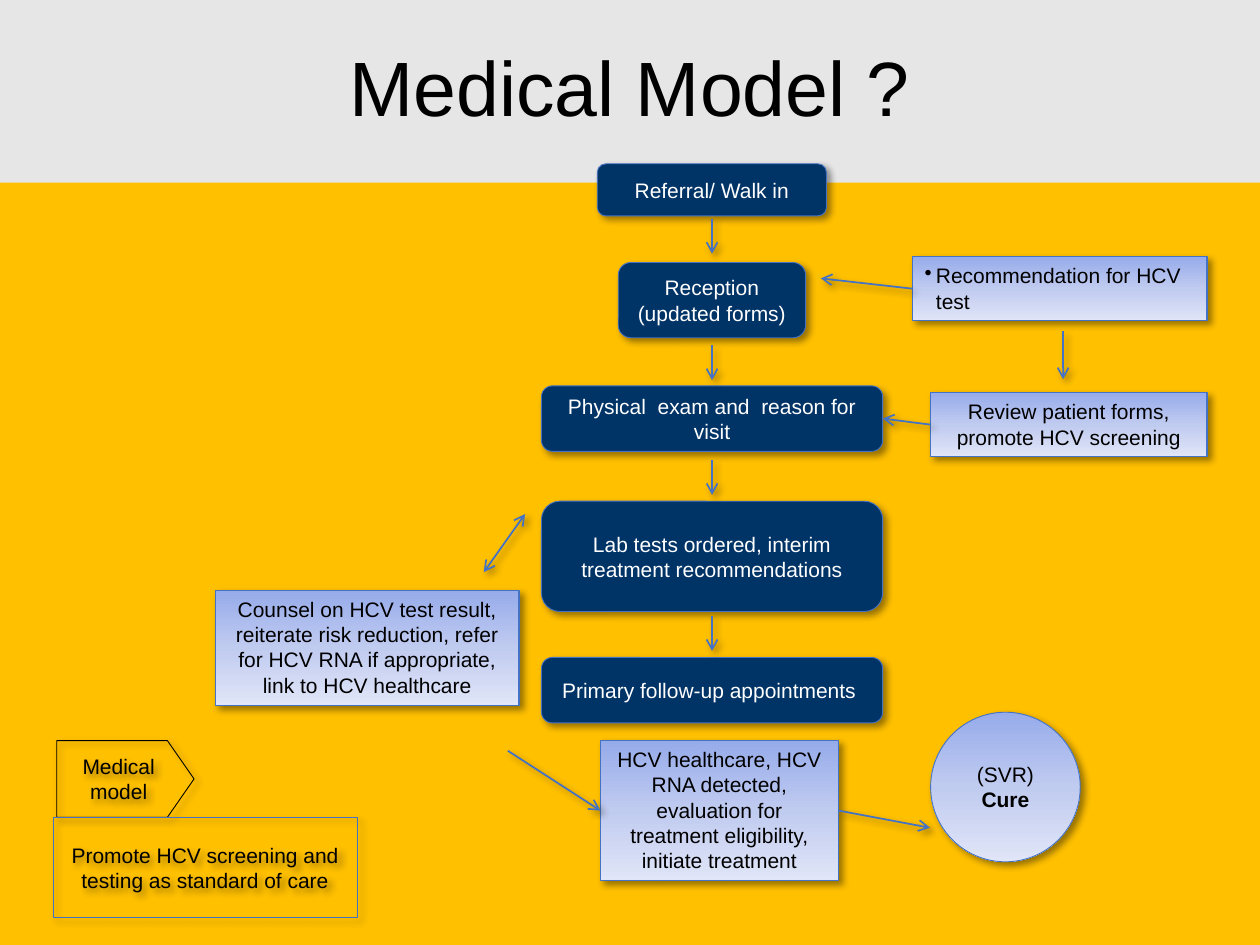
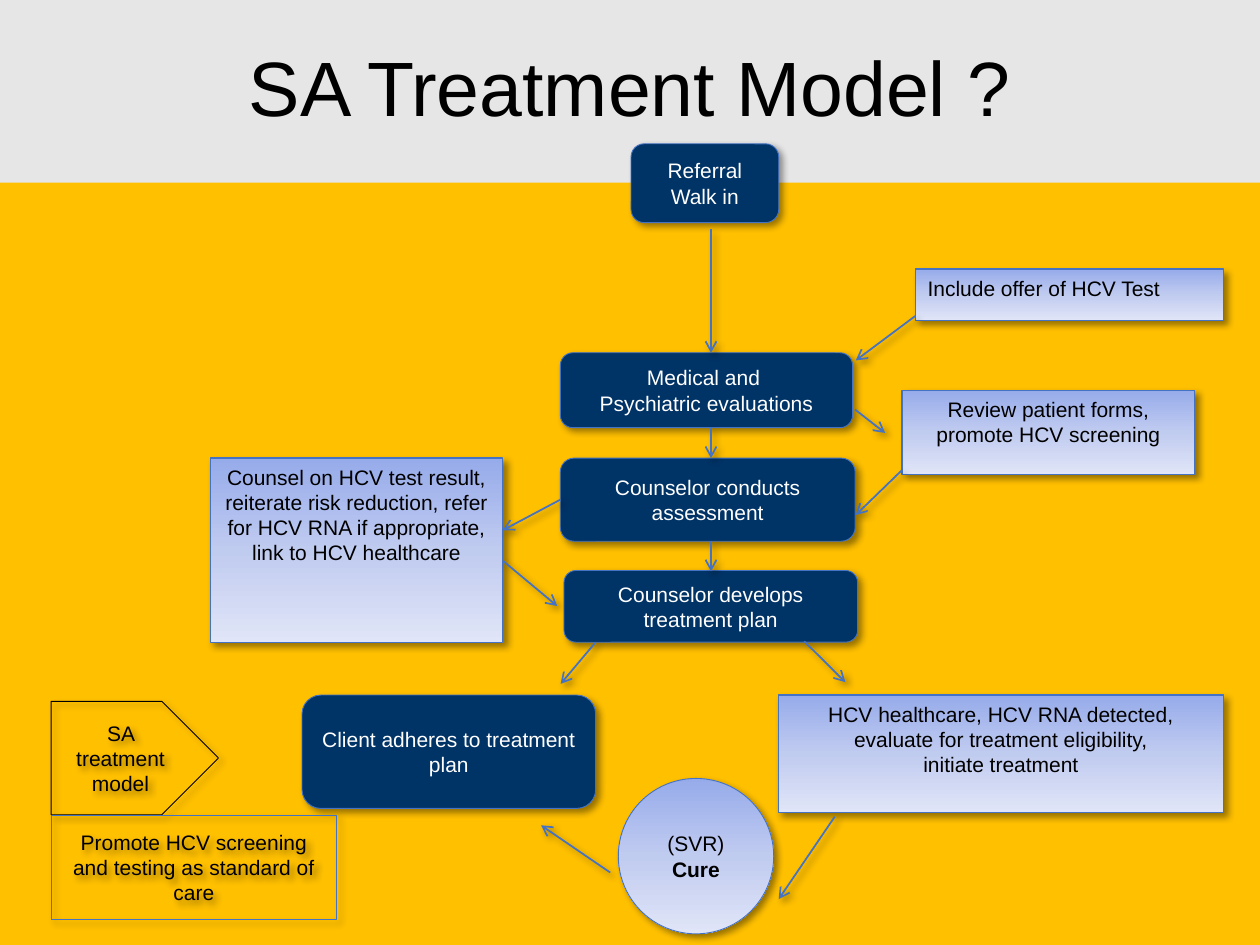
"""Builds two flow charts of hepatitis C care: a medical and a treatment model."""
from copy import deepcopy

from lxml.etree import SubElement
from pptx import Presentation
from pptx.dml.color import RGBColor
from pptx.enum.shapes import MSO_CONNECTOR, MSO_SHAPE
from pptx.enum.text import MSO_ANCHOR, PP_ALIGN
from pptx.oxml.ns import qn
from pptx.util import Pt

COLORS = {
    "background": "FFC000",
    "band": "E7E6E6",
    "step": "003366",
    "line": "4472C4",
    "dark": "000000",
    "light": "FFFFFF",
}
GRADIENT = ((0, "96ABEA"), (0.5, "C0CBF0"), (1, "E0E5F7"))
FONT = "Arial"
TEXT_SIZE = 12
TITLE_SIZE = 44
LEFT, RIGHT = 1, 3
COUNSEL = ("Counsel on HCV test result, reiterate risk reduction, refer "
           "for HCV RNA if appropriate, link to HCV healthcare")
REVIEW = "Review patient forms, promote HCV screening"
PROMOTE = "Promote HCV screening and testing as standard of care"


def rgb(name):
    """Return the named colour."""
    return RGBColor.from_string(COLORS[name])


def format_text(text_frame, size, color, align):
    """Set font, size, colour and alignment of every paragraph."""
    for paragraph in text_frame.paragraphs:
        paragraph.alignment = align
        for run in paragraph.runs:
            run.font.name = FONT
            run.font.size = Pt(size)
            run.font.color.rgb = rgb(color)


def add_shadow(effects):
    """Fill an effect list with the soft shadow all elements share."""
    shadow = SubElement(effects, qn("a:outerShdw"), blurRad=str(Pt(4)),
                        dist=str(Pt(3)), dir="2700000", algn="tl", rotWithShape="0")
    color = SubElement(shadow, qn("a:srgbClr"), val=COLORS["dark"])
    SubElement(color, qn("a:alpha"), val="40000")


def fill_gradient(shape):
    """Fill a shape with the pale blue gradient, top to bottom."""
    shape.fill.gradient()
    shape.fill.gradient_angle = 270
    stop_list = shape.element.spPr.find(".//" + qn("a:gsLst"))
    stop_list.insert(1, deepcopy(stop_list[0]))
    for stop, (position, color) in zip(shape.fill.gradient_stops, GRADIENT):
        stop.position = position
        stop.color.rgb = RGBColor.from_string(color)


def add_box(slide, kind, text, box, line="line", width=0.5,
            color="dark", anchor=MSO_ANCHOR.MIDDLE, align=PP_ALIGN.CENTER):
    """Add an unfilled, shadowed shape with text; box is left, top, width, height."""
    shape = slide.shapes.add_shape(kind, *map(Pt, box))
    shape.fill.background()
    shape.line.color.rgb = rgb(line)
    shape.line.width = Pt(width)
    shape.shadow.inherit = False
    add_shadow(shape.element.spPr.find(qn("a:effectLst")))
    text_frame = shape.text_frame
    text_frame.text = text
    text_frame.word_wrap = True
    text_frame.vertical_anchor = anchor
    format_text(text_frame, TEXT_SIZE, color, align)
    return shape


def add_step(slide, text, *box):
    """Add a dark blue rounded step of the main path."""
    shape = add_box(slide, MSO_SHAPE.ROUNDED_RECTANGLE, text, box, color="light")
    shape.fill.solid()
    shape.fill.fore_color.rgb = rgb("step")
    return shape


def add_note(slide, text, *box, align=PP_ALIGN.CENTER):
    """Add a pale blue box with an HCV action."""
    shape = add_box(slide, MSO_SHAPE.RECTANGLE, text, box, width=0.75,
                    anchor=MSO_ANCHOR.TOP, align=align)
    fill_gradient(shape)
    return shape


def add_bullet(paragraph):
    """Give a paragraph a hanging bullet."""
    properties = paragraph._p.get_or_add_pPr()
    properties.set("marL", str(Pt(6.5)))
    properties.set("indent", str(Pt(-6.5)))
    SubElement(properties, qn("a:buChar"), char="•")


def add_cure(slide, left, top, diameter):
    """Add the circle that marks the cure."""
    circle = add_box(slide, MSO_SHAPE.OVAL, "(SVR)\nCure", (left, top, diameter, diameter))
    fill_gradient(circle)
    circle.text_frame.paragraphs[1].runs[0].font.bold = True


def add_label(slide, name, tag_box, promote_box, point=0.5):
    """Add the pentagon naming the model and the box with its aim."""
    tag = add_box(slide, MSO_SHAPE.PENTAGON, name, tag_box, line="dark")
    tag.adjustments[0] = point
    add_box(slide, MSO_SHAPE.RECTANGLE, PROMOTE, promote_box)


def add_arrow(slide, start, end, begin_at=None, end_at=None, both_ways=False):
    """Add an arrow, joined to a (shape, side) where one is given."""
    arrow = slide.shapes.add_connector(MSO_CONNECTOR.STRAIGHT, *map(Pt, start + end))
    if begin_at:
        arrow.begin_connect(*begin_at)
    if end_at:
        arrow.end_connect(*end_at)
    arrow.line.color.rgb = rgb("line")
    arrow.line.width = Pt(1)
    line = arrow.line._get_or_add_ln()
    if both_ways:
        SubElement(line, qn("a:headEnd"), type="arrow")
    SubElement(line, qn("a:tailEnd"), type="arrow")
    add_shadow(SubElement(arrow.element.spPr, qn("a:effectLst")))


def add_titled_slide(presentation, title_text):
    """Add a title-only slide with the grey title band."""
    slide = presentation.slides.add_slide(presentation.slide_layouts[5])
    title = slide.shapes.title
    title.left, title.top = Pt(0), Pt(0)
    title.width, title.height = presentation.slide_width, Pt(104.4)
    title.fill.solid()
    title.fill.fore_color.rgb = rgb("band")
    text_frame = title.text_frame
    text_frame.text = title_text
    text_frame.vertical_anchor = MSO_ANCHOR.MIDDLE
    text_frame.paragraphs[0].line_spacing = 0.9
    format_text(text_frame, TITLE_SIZE, "dark", PP_ALIGN.CENTER)
    return slide


def build_medical_model(presentation):
    """Build the flow chart of the medical model."""
    slide = add_titled_slide(presentation, "Medical Model ?")
    add_step(slide, "Referral/ Walk in", 341.3, 93.6, 131, 29.8)
    add_step(slide, "Reception\n(updated forms)", 353.3, 150, 107, 43)
    exam = add_step(slide, "Physical  exam and  reason for visit", 309.4, 220.5, 195, 37.4)
    add_step(slide, "Lab tests ordered, interim treatment recommendations",
             309.4, 286.4, 195, 63)
    add_step(slide, "Primary follow-up appointments ", 309.4, 375.7, 195, 37.4)

    recommend = add_note(slide, "Recommendation for HCV test", 521.3, 146.7, 168.5, 36.5,
                         align=PP_ALIGN.LEFT)
    add_bullet(recommend.text_frame.paragraphs[0])
    review = add_note(slide, REVIEW, 531.8, 224.4, 158, 36.5)
    add_note(slide, COUNSEL, 123.1, 337.4, 173.5, 65.6)
    healthcare = add_note(slide, "HCV healthcare, HCV RNA detected, evaluation for "
                          "treatment eligibility,\ninitiate treatment",
                          343.1, 423.2, 136, 80)
    add_cure(slide, 531.8, 407, 85.5)
    add_label(slide, "Medical model", (32.4, 423.2, 78.5, 43.8),
              (30.5, 467, 173.5, 57.2), point=0.347)

    for top in (125, 197.3, 262.8, 352):
        add_arrow(slide, (406.9, top), (406.9, top + 20))
    add_arrow(slide, (607.5, 189.4), (607.5, 216.7))
    add_arrow(slide, (521.3, 165), (469, 159.1), begin_at=(recommend, LEFT))
    add_arrow(slide, (531.8, 242.6), (504.4, 239.2), begin_at=(review, LEFT),
              end_at=(exam, RIGHT))
    add_arrow(slide, (276.5, 326.9), (300, 293.8), both_ways=True)
    add_arrow(slide, (290.2, 429), (343.1, 463.2), end_at=(healthcare, LEFT))
    add_arrow(slide, (479.1, 463.2), (531.4, 473), begin_at=(healthcare, RIGHT))


def build_treatment_model(presentation):
    """Build the flow chart of the SA treatment model."""
    slide = add_titled_slide(presentation, "SA Treatment Model ?")
    add_step(slide, "Referral Walk in", 360.6, 82.2, 84.4, 45)
    add_step(slide, "Medical and \nPsychiatric evaluations", 320.2, 201.6, 167, 42.8)
    assessment = add_step(slide, "Counselor conducts assessment", 320.2, 261.8, 168.5, 47.5)
    add_step(slide, "Counselor develops treatment plan", 322.3, 326, 167.8, 41)
    add_step(slide, "Client adheres to treatment plan", 172.6, 397.2, 167.8, 64.8)

    add_note(slide, "Include offer of HCV Test", 523, 153.8, 176, 29.3,
             align=PP_ALIGN.LEFT)
    add_note(slide, REVIEW, 515.5, 223, 167.3, 48.2)
    add_note(slide, COUNSEL, 120.2, 261.8, 167.2, 105.4)
    add_note(slide, "HCV healthcare, HCV RNA detected, evaluate for treatment "
             "eligibility,\ninitiate treatment", 444.8, 397.2, 254.3, 67)
    add_cure(slide, 353.3, 444.8, 88.8)
    add_label(slide, "SA treatment model", (29.2, 400.8, 95.6, 64.8),
              (29.2, 465.8, 163.2, 59.6))

    for top, bottom in ((131, 201.6), (244.6, 261.8), (309.4, 326.5)):
        add_arrow(slide, (406.3, top), (406.3, bottom))
    add_arrow(slide, (320.2, 285.6), (287.3, 303), begin_at=(assessment, LEFT))
    for start, end in (
        ((523, 180.6), (489, 206)),
        ((488.6, 234), (505.8, 247.4)),
        ((515.5, 268.6), (489, 294.3)),
        ((287.6, 320.6), (318.4, 346.3)),
        ((340.2, 367.2), (320.4, 390.8)),
        ((459.6, 366.5), (483.1, 389.8)),
        ((477, 466.7), (445, 513.8)),
        ((348.7, 498.6), (309.2, 471.6)),
    ):
        add_arrow(slide, start, end)


def main():
    """Build and save the presentation."""
    presentation = Presentation()
    presentation.slide_width, presentation.slide_height = Pt(720), Pt(540)
    background = presentation.slide_master.background.fill
    background.solid()
    background.fore_color.rgb = rgb("background")
    build_medical_model(presentation)
    build_treatment_model(presentation)
    presentation.save("out.pptx")


if __name__ == "__main__":
    main()
